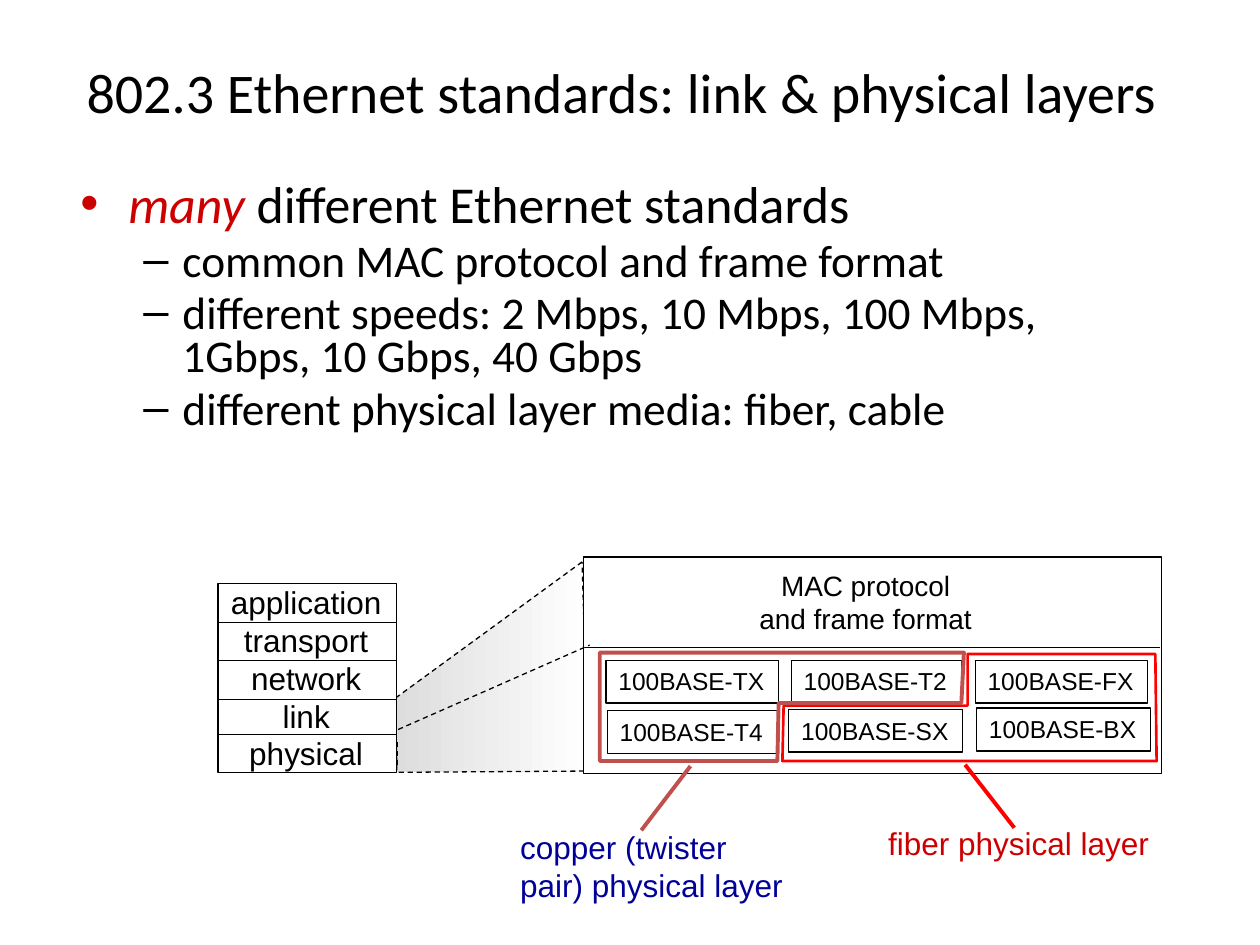
from lxml import etree
from pptx import Presentation
from pptx import util as u
from pptx.dml import color
from pptx.enum import dml, shapes as kinds, text
from pptx.oxml import ns

PX = u.Inches(1) // 100
BLACK, WHITE, RED, DARK_RED = "000000", "FFFFFF", "FF0000", "CC0000"
COPPER, NAVY = "C0504D", "000099"
LEFT, CENTER = text.PP_ALIGN.LEFT, text.PP_ALIGN.CENTER


def paint(target, value):
    target.rgb = color.RGBColor.from_string(value)


def place(shape, *box):
    shape.left, shape.top, shape.width, shape.height = (v * PX for v in box)


def outline(shape, value=BLACK, width=0.75, dashed=False):
    shape.line.fill.solid()
    paint(shape.line.color, value)
    shape.line.width = u.Pt(width)
    if dashed:
        shape.line.dash_style = dml.MSO_LINE.DASH


def add_run(paragraph, words, size, font="Arial", value=BLACK, italic=False):
    run = paragraph.add_run()
    run.text = words
    run.font.size = u.Pt(size)
    run.font.name = font
    run.font.italic = italic
    paint(run.font.color, value)


def write(shape, lines, align=LEFT, wrap=False, anchor=text.MSO_ANCHOR.TOP, **fmt):
    frame = shape.text_frame
    frame.word_wrap = wrap
    frame.vertical_anchor = anchor
    frame.auto_size = text.MSO_AUTO_SIZE.NONE if wrap else text.MSO_AUTO_SIZE.SHAPE_TO_FIT_TEXT
    for i, line in enumerate(lines):
        paragraph = frame.add_paragraph() if i else frame.paragraphs[0]
        paragraph.alignment = align
        add_run(paragraph, line, **fmt)


def add_label(shapes, box, lines, **fmt):
    label = shapes.add_textbox(0, 0, 0, 0)
    write(label, lines, **fmt)
    place(label, *box)


def add_rect(shapes, box, fill=None):
    rect = shapes.add_shape(kinds.MSO_SHAPE.RECTANGLE, *(v * PX for v in box))
    rect.shadow.inherit = False
    if fill:
        rect.fill.solid()
        paint(rect.fill.fore_color, fill)
    else:
        rect.fill.background()
    outline(rect)
    return rect


def add_line(shapes, x1, y1, x2, y2, **stroke):
    line = shapes.add_connector(kinds.MSO_CONNECTOR.STRAIGHT, *(v * PX for v in (x1, y1, x2, y2)))
    outline(line, **stroke)
    etree.SubElement(line._element.spPr, ns.qn("a:effectLst"))


def add_path(shapes, left, top, points, close=True, **stroke):
    corners = [(left + x, top + y) for x, y in points]
    builder = shapes.build_freeform(*corners[0], scale=PX)
    builder.add_line_segments(corners[1:], close=close)
    path = builder.convert_to_shape()
    path.shadow.inherit = False
    path.fill.background()
    outline(path, **stroke)
    return path


def add_title(slide, box, words):
    title = slide.shapes.title
    place(title, *box)
    write(title, [words], align=CENTER, wrap=True, anchor=text.MSO_ANCHOR.MIDDLE,
          size=32, font="Calibri")


def add_bullet(paragraph, level, mark, margin, hang):
    paragraph.level = level
    paragraph.line_spacing = 0.8
    paragraph.space_before = u.Pt(5 if level else 6)
    props = paragraph._p.get_or_add_pPr()
    props.set("marL", str(margin * PX))
    props.set("indent", str(-hang * PX))
    etree.SubElement(props, ns.qn("a:buFont")).set("typeface", "Arial")
    etree.SubElement(props, ns.qn("a:buChar")).set("char", mark)


def add_points(slide, box, stressed, headline, details):
    points = slide.shapes.add_textbox(*(v * PX for v in box))
    frame = points.text_frame
    frame.word_wrap = True
    first = frame.paragraphs[0]
    add_bullet(first, 0, "•", 38, 38)
    add_run(first, stressed, 29.6, "Calibri", DARK_RED, italic=True)
    add_run(first, headline, 29.6, "Calibri")
    for detail in details:
        paragraph = frame.add_paragraph()
        add_bullet(paragraph, 1, "–", 81, 31)
        add_run(paragraph, detail, 25.9, "Calibri")


def add_zoom(slide, left, top):
    zoom = add_path(slide.shapes, left, top,
                    [(148, 0), (0, 108), (1, 167), (153, 166)], dashed=True)
    zoom.fill.gradient()
    zoom.fill.gradient_angle = 0
    for stop, value in zip(zoom.fill.gradient_stops, ("DDDDDD", WHITE)):
        paint(stop.color, value)


def add_stack(slide, left, top, width, height, layers):
    shapes = slide.shapes.add_group_shape().shapes
    right = left + width
    add_rect(shapes, (left, top, width, height), WHITE)
    add_label(shapes, (left, top - 5, 140, 160), layers, align=CENTER, size=18)
    for y in (31, 61, 92, 120):
        add_line(shapes, left, top + y, right, top + y)
    for x, y in ((left, 128), (right, 126)):
        add_line(shapes, x, top + y, x, top + y + 19, dashed=True)


def add_standards(slide, left, top, width, height):
    shapes = slide.shapes
    add_rect(shapes, (left, top, width, height), WHITE)
    add_line(shapes, left + 1, top + 72, left + width - 1, top + 72)
    add_label(shapes, (left + 129, top + 4, 190, 64), ["MAC protocol", "and frame format"],
              align=CENTER, size=16)
    chips = [("TX", 18, 82, 137), ("T2", 165, 82, 135), ("FX", 311, 82, 137),
             ("T4", 19, 122, 135), ("SX", 163, 121, 138), ("BX", 312, 120, 138)]
    for suffix, x, y, chip_width in chips:
        chip = add_rect(shapes, (left + x, top + y, chip_width, 34))
        write(chip, [f"100BASE-{suffix}"], size=14)


def add_medium(slide, left, top, border, border_width, value, pointer, label_box, lines, label_color):
    shapes = slide.shapes.add_group_shape().shapes
    add_path(shapes, left, top, border, value=value, width=border_width)
    x1, y1, x2, y2 = pointer
    add_line(shapes, left + x1, top + y1, left + x2, top + y2, value=value, width=2.25)
    x, y, width, height = label_box
    add_label(shapes, (left + x, top + y, width, height), lines, size=18, value=label_color)


def main():
    deck = Presentation()
    deck.slide_width, deck.slide_height = 1000 * PX, 750 * PX
    slide = deck.slides.add_slide(deck.slide_layouts[5])
    add_title(slide, (17, 10, 953, 125), "802.3 Ethernet standards: link & physical layers")
    add_points(slide, (54, 141, 850, 230), "many ", "different Ethernet standards",
               ["common MAC protocol and frame format",
                "different speeds: 2 Mbps, 10 Mbps, 100 Mbps, 1Gbps, 10 Gbps, 40 Gbps",
                "different physical layer media: fiber, cable"])
    add_zoom(slide, 314, 446)
    add_stack(slide, 173, 463, 142, 150,
              ["application", "transport", "network", "link", "physical"])
    add_standards(slide, 463, 442, 459, 172)
    add_path(slide.shapes, 316, 512, [(0, 67), (152, 0)], close=False, dashed=True)
    add_medium(slide, 621, 519,
               [(147, 0), (147, 41), (1, 41), (0, 85), (297, 85), (296, 0)], 1.5, RED,
               (145, 88, 184, 138), (74, 130, 229, 40), ["fiber physical layer"], DARK_RED)
    add_medium(slide, 476, 518,
               [(289, 0), (287, 40), (142, 40), (141, 86), (0, 86), (0, 0)], 2.25, COPPER,
               (72, 90, 33, 141), (-73, 134, 231, 71),
               ["copper (twister", "pair) physical layer"], NAVY)
    deck.save("out.pptx")


if __name__ == "__main__":
    main()
